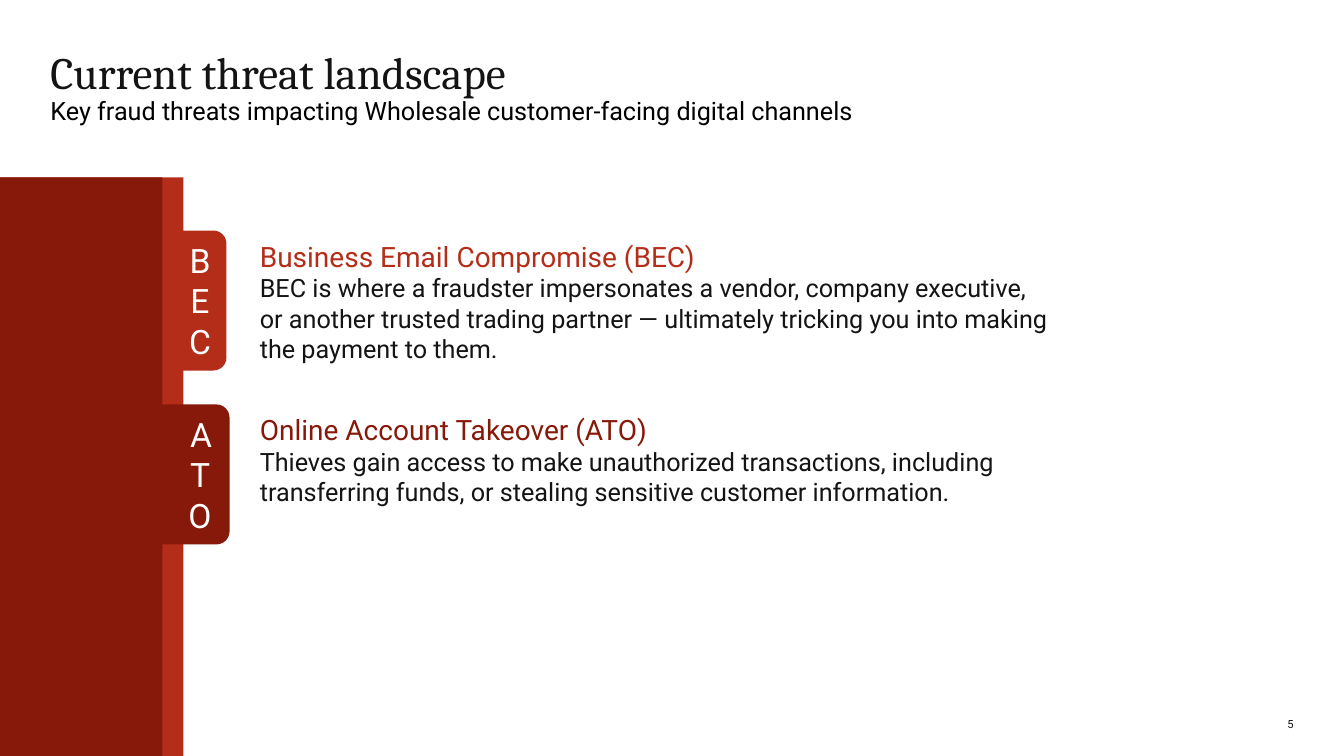
"""Build the slide on the current threat landscape."""
from pptx import Presentation
from pptx.dml.color import RGBColor
from pptx.enum import shapes, text
from pptx.util import Pt

COLORS = {"ink": "141414", "black": "000000", "white": "FFFFFF",
          "red": "B42D19", "maroon": "87190A"}
SLIDE_W, SLIDE_H = 960, 540
BAND_TOP = 126.7
FIRST_TAB_TOP, TAB_STEP = 164.7, 124.2
NO_INSETS = {"margin_left": 0, "margin_top": 0, "margin_right": 0, "margin_bottom": 0}
THREATS = [
    {"letters": "BEC", "color": "red", "band_width": 131, "tab_left": 105.8,
     "text_width": 613.5, "heading": "Business Email Compromise (BEC)",
     "body": "BEC is where a fraudster impersonates a vendor, company executive,\n"
             "or another trusted trading partner — ultimately tricking you into making\n"
             "the payment to them."},
    {"letters": "ATO", "color": "maroon", "band_width": 116, "tab_left": 108,
     "text_width": 635, "heading": "Online Account Takeover (ATO)",
     "body": "Thieves gain access to make unauthorized transactions, including "
             "transferring funds, or stealing sensitive customer information."},
]


def apply(target, values):
    for name, value in values.items():
        setattr(target, name, value)


def place(item, left, top, width, height):
    apply(item, {"left": Pt(left), "top": Pt(top), "width": Pt(width), "height": Pt(height)})


def write(item, parts, paragraph_format, frame_format):
    frame = item.text_frame
    apply(frame, {"word_wrap": True, "auto_size": text.MSO_AUTO_SIZE.NONE, **frame_format})
    paragraph = frame.paragraphs[0]
    apply(paragraph, paragraph_format)
    lines = [(line, *style) for words, *style in parts for line in words.split("\n")]
    for index, (line, size, color, font) in enumerate(lines):
        if index:
            paragraph.add_line_break()
        run = paragraph.add_run()
        run.text = line
        apply(run.font, {"size": Pt(size), "name": font})
        run.font.color.rgb = RGBColor.from_string(COLORS[color])


def add_text(parent, box, parts, paragraph_format, frame_format):
    write(parent.add_textbox(*map(Pt, box)), parts, paragraph_format, frame_format)


def add_block(parent, kind, box, color):
    block = parent.add_shape(kind, *map(Pt, box))
    block.shadow.inherit = False
    block.fill.solid()
    block.fill.fore_color.rgb = RGBColor.from_string(COLORS[color])
    block.line.fill.background()


def add_description(slide, threat, tab_top):
    add_text(slide.shapes, (178.5, tab_top + 2.5, threat["text_width"], 120),
             [(threat["heading"], 20, threat["color"], "Roboto"),
              (threat["body"], 18, "ink", "Roboto")],
             {"space_after": Pt(8)}, {})


def add_marker(slide, threat, tab_top):
    marker = slide.shapes.add_group_shape().shapes
    add_block(marker, shapes.MSO_SHAPE.RECTANGLE,
              (0, BAND_TOP, threat["band_width"], SLIDE_H - BAND_TOP), threat["color"])
    add_block(marker, shapes.MSO_SHAPE.ROUNDED_RECTANGLE,
              (threat["tab_left"], tab_top, 56, 100), threat["color"])
    add_text(marker, (131, tab_top + 7, 23.8, 86),
             [(threat["letters"], 24, "white", "Roboto")],
             {"alignment": text.PP_ALIGN.CENTER, "space_before": Pt(12)},
             {"vertical_anchor": text.MSO_ANCHOR.MIDDLE, **NO_INSETS})


def main():
    deck = Presentation()
    apply(deck, {"slide_width": Pt(SLIDE_W), "slide_height": Pt(SLIDE_H)})
    slide = deck.slides.add_slide(deck.slide_layouts[5])

    title = slide.shapes.title
    place(title, 36, 36, 888, 72)
    write(title,
          [("Current threat landscape", 32, "ink", "Cambria"),
           ("Key fraud threats impacting Wholesale customer-facing digital channels",
            18, "black", "Roboto")],
          {"alignment": text.PP_ALIGN.LEFT, "line_spacing": 0.9},
          {"vertical_anchor": text.MSO_ANCHOR.TOP, **NO_INSETS})
    add_text(slide.shapes, (888, 504, 36, 18), [("5", 8, "ink", "Roboto")],
             {"alignment": text.PP_ALIGN.RIGHT},
             {"vertical_anchor": text.MSO_ANCHOR.BOTTOM, **NO_INSETS})

    for index, threat in enumerate(THREATS):
        tab_top = FIRST_TAB_TOP + index * TAB_STEP
        add_description(slide, threat, tab_top)
        add_marker(slide, threat, tab_top)
    deck.save("out.pptx")


if __name__ == "__main__":
    main()
